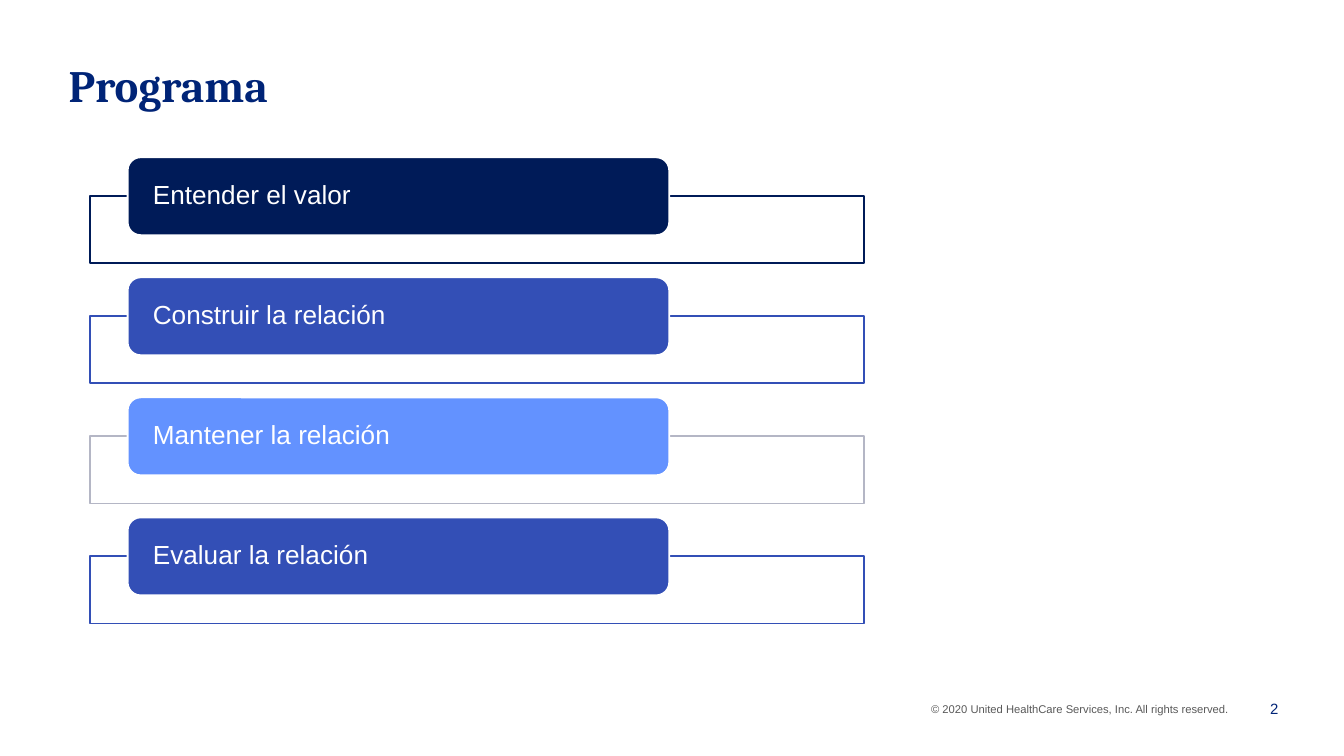
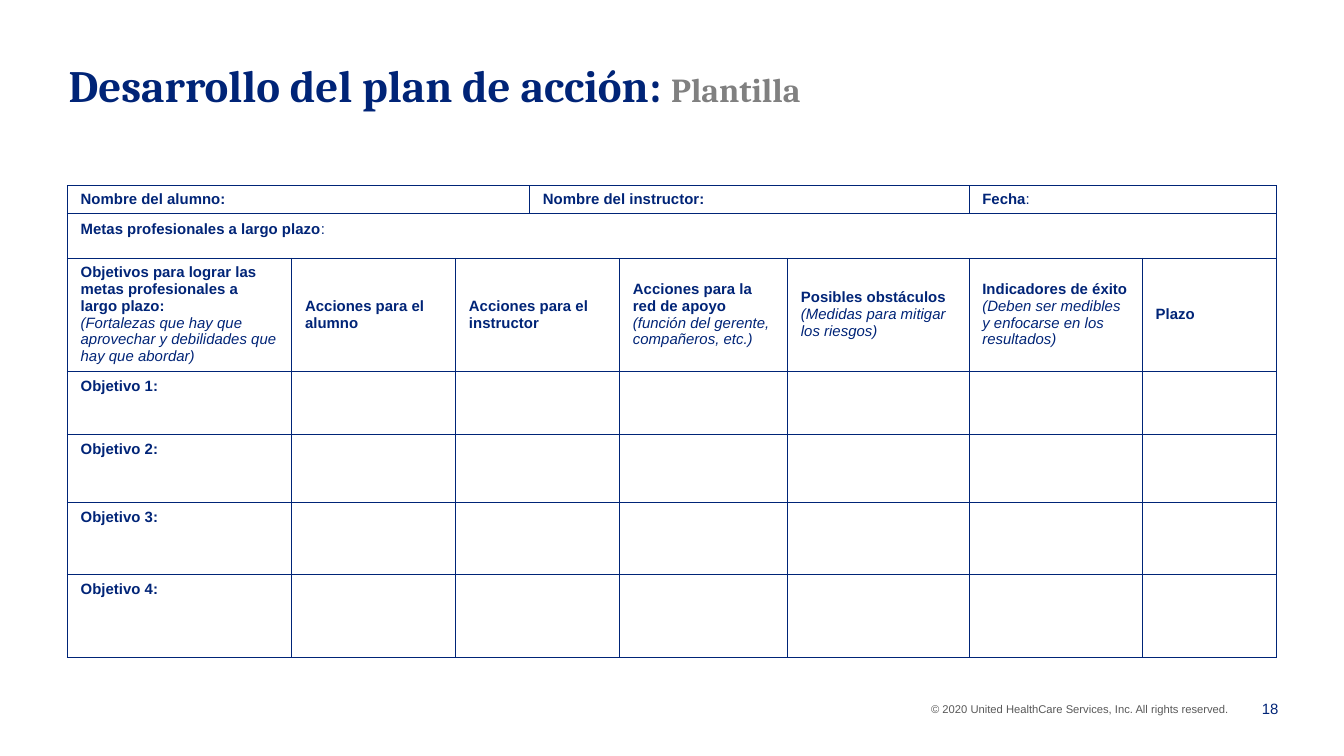
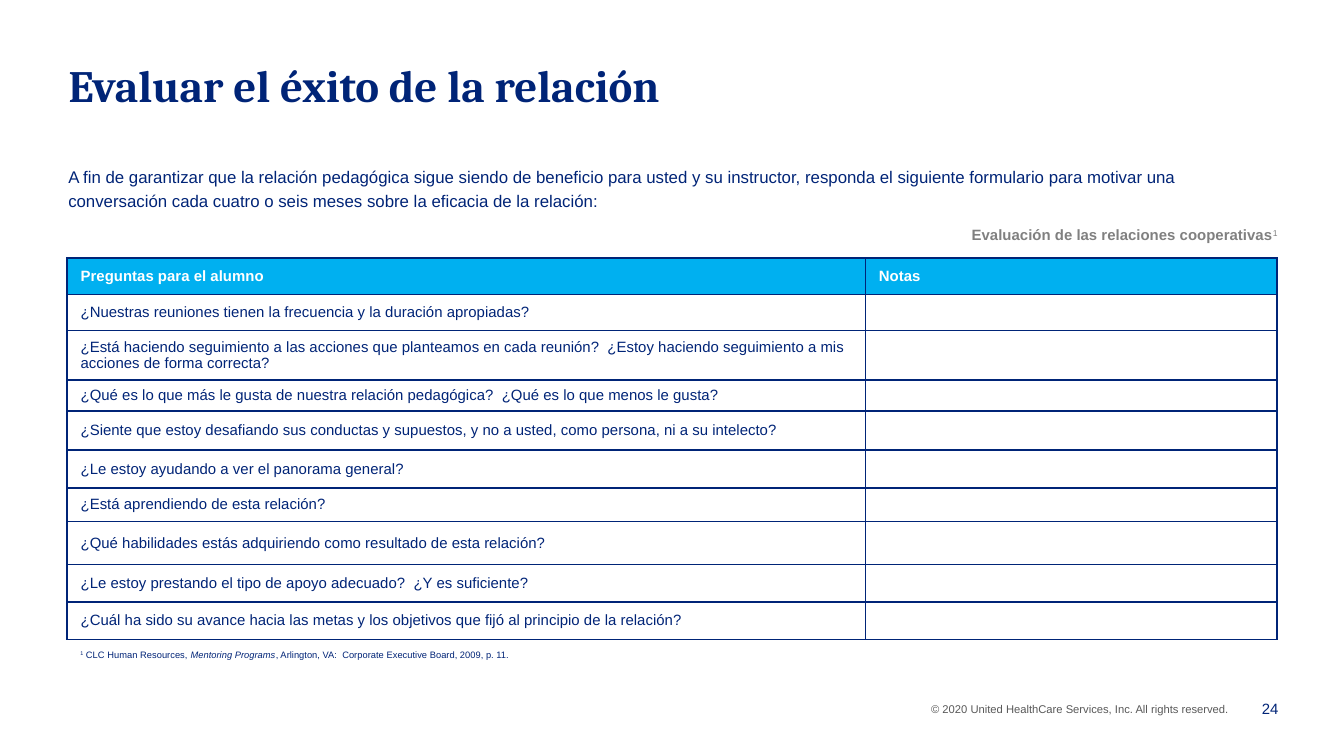
from lxml.etree import SubElement
from pptx import Presentation
from pptx.dml.color import RGBColor
from pptx.enum.shapes import MSO_SHAPE as Shape
from pptx.enum.text import MSO_ANCHOR as Anchor, MSO_AUTO_SIZE as AutoSize, PP_ALIGN as Align
from pptx.oxml.ns import qn
from pptx.util import Inches, Pt

PAGE_WIDTH = 10
PAGE_HEIGHT = PAGE_WIDTH * 9 / 16
NAVY, DEEP, BLUE, SKY = "002477", "001B58", "334FB6", "6392FF"
CYAN, GRAY, DARK_GRAY, SILVER, WHITE = "00B0F0", "808080", "595959", "B4B6C5", "FFFFFF"
COPYRIGHT = "© 2020 United HealthCare Services, Inc. All rights reserved."
DEFAULT_INSETS = (0.1, 0.05, 0.1, 0.05)
FLAT_INSETS = (0.1, 0, 0.1, 0)
PLAIN, NOTE = {"bold": False}, {"bold": False, "italic": True}
RAISED = {"bold": False, "raised": True}

STEPS = [
    ("Entender el valor", DEEP, DEEP),
    ("Construir la relación", BLUE, BLUE),
    ("Mantener la relación", SKY, SILVER),
    ("Evaluar la relación", BLUE, BLUE),
]
FIRST_STEP, LAST_STEP = 1.17, 3.85

PLAN_COLUMNS = [1.67, 1.22, 0.55, 0.67, 1.25, 1.35, 1.29, 1]
PLAN_ROWS = [0.21, 0.33, 0.84, 0.47, 0.51, 0.53, 0.62]
PLAN_NAMES = {
    0: [["Nombre del alumno:"]],
    3: [["Nombre del instructor:"]],
    6: [["Fecha", (":", PLAIN)]],
}
PLAN_HEADINGS = {
    0: [["Objetivos para lograr las metas profesionales a largo plazo:"],
        [("(Fortalezas que hay que aprovechar y debilidades que hay que abordar)", NOTE)]],
    1: [["Acciones para el alumno"]],
    2: [["Acciones para el instructor"]],
    4: [["Acciones para la red de apoyo ",
         ("(función del gerente, compañeros, etc.)", NOTE)]],
    5: [["Posibles obstáculos"], [("(Medidas para mitigar los riesgos)", NOTE)]],
    6: [["Indicadores de éxito"],
        [("(Deben ser medibles y enfocarse en los resultados)", NOTE)]],
    7: [["Plazo"]],
}

QUESTION_ROWS = [0.27, 0.27, 0.36, 0.23, 0.29, 0.28, 0.25, 0.32, 0.28, 0.28]
QUESTIONS = [
    "¿Nuestras reuniones tienen la frecuencia y la duración apropiadas?",
    "¿Está haciendo seguimiento a las acciones que planteamos en cada reunión?  "
    "¿Estoy haciendo seguimiento a mis acciones de forma correcta?",
    "¿Qué es lo que más le gusta de nuestra relación pedagógica?  "
    "¿Qué es lo que menos le gusta?",
    "¿Siente que estoy desafiando sus conductas y supuestos, y no a usted, "
    "como persona, ni a su intelecto?",
    "¿Le estoy ayudando a ver el panorama general?",
    "¿Está aprendiendo de esta relación?",
    "¿Qué habilidades estás adquiriendo como resultado de esta relación?",
    "¿Le estoy prestando el tipo de apoyo adecuado?  ¿Y es suficiente?",
    "¿Cuál ha sido su avance hacia las metas y los objetivos que fijó "
    "al principio de la relación?",
]


def color(value):
    return RGBColor.from_string(value)


def set_insets(target, insets):
    for side, inset in zip(("left", "top", "right", "bottom"), insets):
        setattr(target, f"margin_{side}", Inches(inset))


def write(frame, paragraphs, layout=None, **style):
    """Fill a frame; each paragraph lists strings or (string, style changes)."""
    for index, runs in enumerate(paragraphs):
        para = frame.add_paragraph() if index else frame.paragraphs[0]
        for name, value in (layout or {}).items():
            setattr(para, name, value)
        for item in runs:
            text, changes = (item, {}) if isinstance(item, str) else item
            values = {"name": "Arial", "color": NAVY, **style, **changes}
            span = para.add_run()
            span.text = text
            span.font.color.rgb = color(values.pop("color"))
            span.font.size = Pt(values.pop("size"))
            if values.pop("raised", False):
                span._r.get_or_add_rPr().set("baseline", "30000")
            for name, value in values.items():
                setattr(span.font, name, value)


def add_text(page, area, paragraphs, insets=DEFAULT_INSETS, anchor=Anchor.TOP,
             layout=None, **style):
    box = page.shapes.add_textbox(*map(Inches, area))
    frame = box.text_frame
    frame.word_wrap = True
    frame.vertical_anchor = anchor
    set_insets(frame, insets)
    write(frame, paragraphs, layout, **style)


def add_page(deck, title_runs, number):
    """Add a slide with its title, copyright line and page number."""
    page = deck.slides.add_slide(deck.slide_layouts[5])
    title = page.shapes.title
    title.left, title.top, title.width, title.height = map(Inches, (0.41, 0.38, 7.94, 0.6))
    frame = title.text_frame
    frame.auto_size = AutoSize.NONE
    frame.vertical_anchor = Anchor.TOP
    set_insets(frame, DEFAULT_INSETS)
    write(frame, [title_runs], {"alignment": Align.LEFT}, name="Cambria", size=24, bold=True)
    add_text(page, (6.83, 5.18, 2.58, 0.2), [[COPYRIGHT]], size=6, color=DARK_GRAY)
    add_text(page, (9.22, 5.12, 0.39, 0.31), [[str(number)]], anchor=Anchor.MIDDLE,
             layout={"alignment": Align.RIGHT}, size=8)
    return page


def add_block(page, kind, area, fill, line):
    block = page.shapes.add_shape(kind, *map(Inches, area))
    block.shadow.inherit = False
    block.fill.solid()
    block.fill.fore_color.rgb = color(fill)
    block.line.color.rgb = color(line)
    block.line.width = Pt(1)
    return block


def add_step(page, top, label, fill, outline):
    frame_box = add_block(page, Shape.RECTANGLE, (0.67, top + 0.29, 5.76, 0.5), WHITE, outline)
    fill_color = frame_box._element.spPr.find(qn("a:solidFill"))[0]
    SubElement(fill_color, qn("a:alpha"), val="90000")
    block = add_block(page, Shape.ROUNDED_RECTANGLE, (0.95, top, 4.03, 0.58), fill, WHITE)
    frame = block.text_frame
    frame.word_wrap = True
    frame.vertical_anchor = Anchor.MIDDLE
    set_insets(frame, (0.16, 0, 0.16, 0))
    write(frame, [[label]], {"alignment": Align.LEFT, "line_spacing": 0.9},
          size=14, color=WHITE)


def add_borders(cell, width):
    properties = cell._tc.get_or_add_tcPr()
    for side in ("lnL", "lnR", "lnT", "lnB"):
        line = SubElement(properties, qn(f"a:{side}"), w=str(Pt(width)))
        SubElement(SubElement(line, qn("a:solidFill")), qn("a:srgbClr"), val=NAVY)


def add_grid(page, left, top, columns, rows, border):
    """Add an unfilled table with ruled cells, ready for 8-point text."""
    area = map(Inches, (left, top, sum(columns), sum(rows)))
    table = page.shapes.add_table(len(rows), len(columns), *area).table
    table.first_row = table.horz_banding = False
    for column, width in zip(table.columns, columns):
        column.width = Inches(width)
    for row, height in zip(table.rows, rows):
        row.height = Inches(height)
    for cell in table.iter_cells():
        add_borders(cell, border)
        cell.fill.background()
        SubElement(cell.text_frame.paragraphs[0]._p, qn("a:endParaRPr"), sz="800")
    return table


def fill_cell(cell, paragraphs, insets=DEFAULT_INSETS, anchor=Anchor.MIDDLE, **style):
    cell.vertical_anchor = anchor
    set_insets(cell, insets)
    write(cell.text_frame, paragraphs, size=8, **style)


def build_program(deck):
    page = add_page(deck, ["Programa"], 2)
    pitch = (LAST_STEP - FIRST_STEP) / (len(STEPS) - 1)
    for index, step in enumerate(STEPS):
        add_step(page, FIRST_STEP + pitch * index, *step)


def build_plan(deck):
    subtitle = ("Plantilla", {"size": 18, "color": GRAY})
    page = add_page(deck, ["Desarrollo del plan de acción: ", subtitle], 18)
    table = add_grid(page, 0.5, 1.38, PLAN_COLUMNS, PLAN_ROWS, 0.25)
    spans = [(0, 0, 2), (0, 3, 5), (0, 6, 7), (1, 0, 7)]
    spans += [(row, 2, 3) for row in range(2, len(PLAN_ROWS))]
    for row, first, last in spans:
        table.cell(row, first).merge(table.cell(row, last))
    for row, contents in ((0, PLAN_NAMES), (2, PLAN_HEADINGS)):
        for column, paragraphs in contents.items():
            fill_cell(table.cell(row, column), paragraphs, FLAT_INSETS, bold=True)
    goals = [["Metas profesionales a largo plazo", (":", PLAIN)]]
    fill_cell(table.cell(1, 0), goals, anchor=Anchor.TOP, bold=True)
    for number in range(1, 5):
        fill_cell(table.cell(number + 2, 0), [[f"Objetivo {number}:"]],
                  anchor=Anchor.TOP, bold=True)


def build_evaluation(deck):
    page = add_page(deck, ["Evaluar el éxito de la relación"], 24)
    add_text(page, (6.92, 1.68, 2.98, 0.13),
             [["Evaluación de las relaciones cooperativas", ("1", RAISED)]],
             insets=(0.31, 0, 0.22, 0), size=8, color=GRAY, bold=True)
    add_text(page, (0.5, 4.83, 9, 0.08),
             [[("1", RAISED), " CLC Human Resources, ", ("Mentoring Programs", NOTE),
               ", Arlington, VA:  Corporate Executive Board, 2009, p. 11."]],
             insets=FLAT_INSETS, size=5)
    table = add_grid(page, 0.5, 1.92, [5.94, 3.06], QUESTION_ROWS, 1)
    for column, heading in enumerate(("Preguntas para el alumno", "Notas")):
        cell = table.cell(0, column)
        cell.fill.solid()
        cell.fill.fore_color.rgb = color(CYAN)
        fill_cell(cell, [[heading]], color=WHITE, bold=True)
    for row, question in enumerate(QUESTIONS, 1):
        fill_cell(table.cell(row, 0), [[question]])
    add_text(page, (0.41, 1.16, 9.14, 0.45),
             [["A fin de garantizar que la relación pedagógica sigue siendo de beneficio "
               "para usted y su instructor, responda el siguiente formulario para motivar "
               "una conversación cada cuatro o seis meses sobre la eficacia de la relación:"]],
             layout={"line_spacing": 1.2}, size=9)


def main():
    deck = Presentation()
    deck.slide_width, deck.slide_height = Inches(PAGE_WIDTH), Inches(PAGE_HEIGHT)
    build_program(deck)
    build_plan(deck)
    build_evaluation(deck)
    deck.save("out.pptx")


if __name__ == "__main__":
    main()
